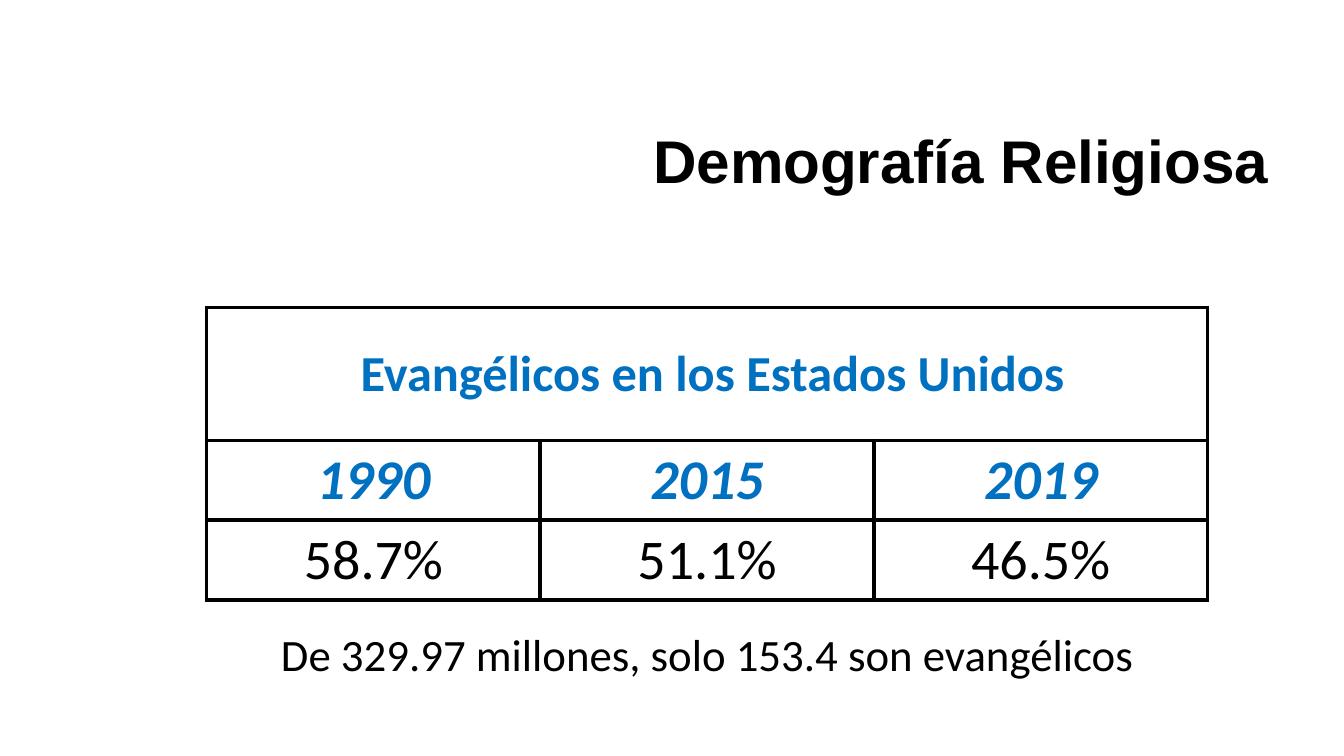
from dataclasses import dataclass

from lxml import etree
from pptx import Presentation
from pptx.dml.color import RGBColor
from pptx.enum.text import MSO_ANCHOR, PP_ALIGN
from pptx.oxml.ns import qn
from pptx.slide import Slide
from pptx.table import _Cell
from pptx.text.text import TextFrame
from pptx.util import Pt

MIDDLE = MSO_ANCHOR.MIDDLE
TOP = MSO_ANCHOR.TOP
CENTER = PP_ALIGN.CENTER
RIGHT = PP_ALIGN.RIGHT

BLACK = RGBColor(0x00, 0x00, 0x00)
WHITE = RGBColor(0xFF, 0xFF, 0xFF)
BLUE = RGBColor(0x00, 0x70, 0xC0)

TABLE_LEFT, TABLE_TOP = 147.6, 219.6
COLUMN_WIDTH = 238.33
ROW_HEIGHTS = (95, 57, 57)
BORDER_WIDTH = 3
BORDER_SIDES = ("a:lnL", "a:lnR", "a:lnT", "a:lnB")
CELL_MARGIN = 0.72
BOX_MARGIN = 3.6


@dataclass(frozen=True)
class TextStyle:
    size: float
    color: RGBColor = BLACK
    name: str = "Calibri"
    bold: bool = False
    italic: bool = False


@dataclass(frozen=True)
class TextBox:
    text: str
    left: float
    top: float
    width: float
    height: float
    style: TextStyle
    alignment: PP_ALIGN
    anchor: MSO_ANCHOR


@dataclass(frozen=True)
class TableRow:
    texts: tuple[str, ...]
    style: TextStyle


TEXT_BOXES = (
    TextBox("Demografía Religiosa", 50.4, 88.6, 859, 56.9,
            TextStyle(43, name="Arial", bold=True), RIGHT, MIDDLE),
    TextBox("De 329.97 millones, solo 153.4 son evangélicos", 91.4, 448.6, 828, 56.9,
            TextStyle(32), CENTER, TOP),
)

TABLE_ROWS = (
    TableRow((" Evangélicos en los Estados Unidos",), TextStyle(36, BLUE, bold=True)),
    TableRow(("1990", "2015", "2019"), TextStyle(40, BLUE, bold=True, italic=True)),
    TableRow(("58.7%", "51.1%", "46.5%"), TextStyle(40)),
)


def write_text(frame: TextFrame, text: str, style: TextStyle, alignment: PP_ALIGN) -> None:
    paragraph = frame.paragraphs[0]
    paragraph.alignment = alignment
    run = paragraph.add_run()
    run.text = text
    formats = {
        "name": style.name,
        "size": Pt(style.size),
        "bold": style.bold,
        "italic": style.italic,
    }
    for attribute, value in formats.items():
        setattr(run.font, attribute, value)
    run.font.color.rgb = style.color


def set_margins(target: TextFrame | _Cell, margin: float) -> None:
    for side in ("left", "top", "right", "bottom"):
        setattr(target, f"margin_{side}", Pt(margin))


def add_text_box(slide: Slide, box: TextBox) -> None:
    shape = slide.shapes.add_textbox(
        Pt(box.left), Pt(box.top), Pt(box.width), Pt(box.height)
    )
    frame = shape.text_frame
    frame.word_wrap = True
    frame.vertical_anchor = box.anchor
    set_margins(frame, BOX_MARGIN)
    write_text(frame, box.text, box.style, box.alignment)
    frame.paragraphs[0].line_spacing = 0.9


def format_cell(cell: _Cell) -> None:
    cell.vertical_anchor = MIDDLE
    set_margins(cell, CELL_MARGIN)
    properties = cell._tc.get_or_add_tcPr()
    for side in BORDER_SIDES:
        line = etree.SubElement(properties, qn(side), w=str(Pt(BORDER_WIDTH)))
        fill = etree.SubElement(line, qn("a:solidFill"))
        etree.SubElement(fill, qn("a:srgbClr"), val=str(BLACK))
    cell.fill.solid()
    cell.fill.fore_color.rgb = WHITE


def add_table(slide: Slide, rows: tuple[TableRow, ...]) -> None:
    column_count = max(len(row.texts) for row in rows)
    table = slide.shapes.add_table(
        len(rows), column_count, Pt(TABLE_LEFT), Pt(TABLE_TOP),
        Pt(COLUMN_WIDTH * column_count), Pt(sum(ROW_HEIGHTS)),
    ).table
    table.first_row = False
    table.horz_banding = False
    for column in table.columns:
        column.width = Pt(COLUMN_WIDTH)
    for row, height in zip(table.rows, ROW_HEIGHTS):
        row.height = Pt(height)
    for cell in table.iter_cells():
        format_cell(cell)
    table.cell(0, 0).merge(table.cell(0, column_count - 1))
    for row_index, row in enumerate(rows):
        for column_index, text in enumerate(row.texts):
            frame = table.cell(row_index, column_index).text_frame
            write_text(frame, text, row.style, CENTER)


def main() -> None:
    presentation = Presentation()
    presentation.slide_width = Pt(960)
    presentation.slide_height = Pt(540)
    slide = presentation.slides.add_slide(presentation.slide_layouts[6])
    add_table(slide, TABLE_ROWS)
    for box in TEXT_BOXES:
        add_text_box(slide, box)
    presentation.save("out.pptx")


if __name__ == "__main__":
    main()
